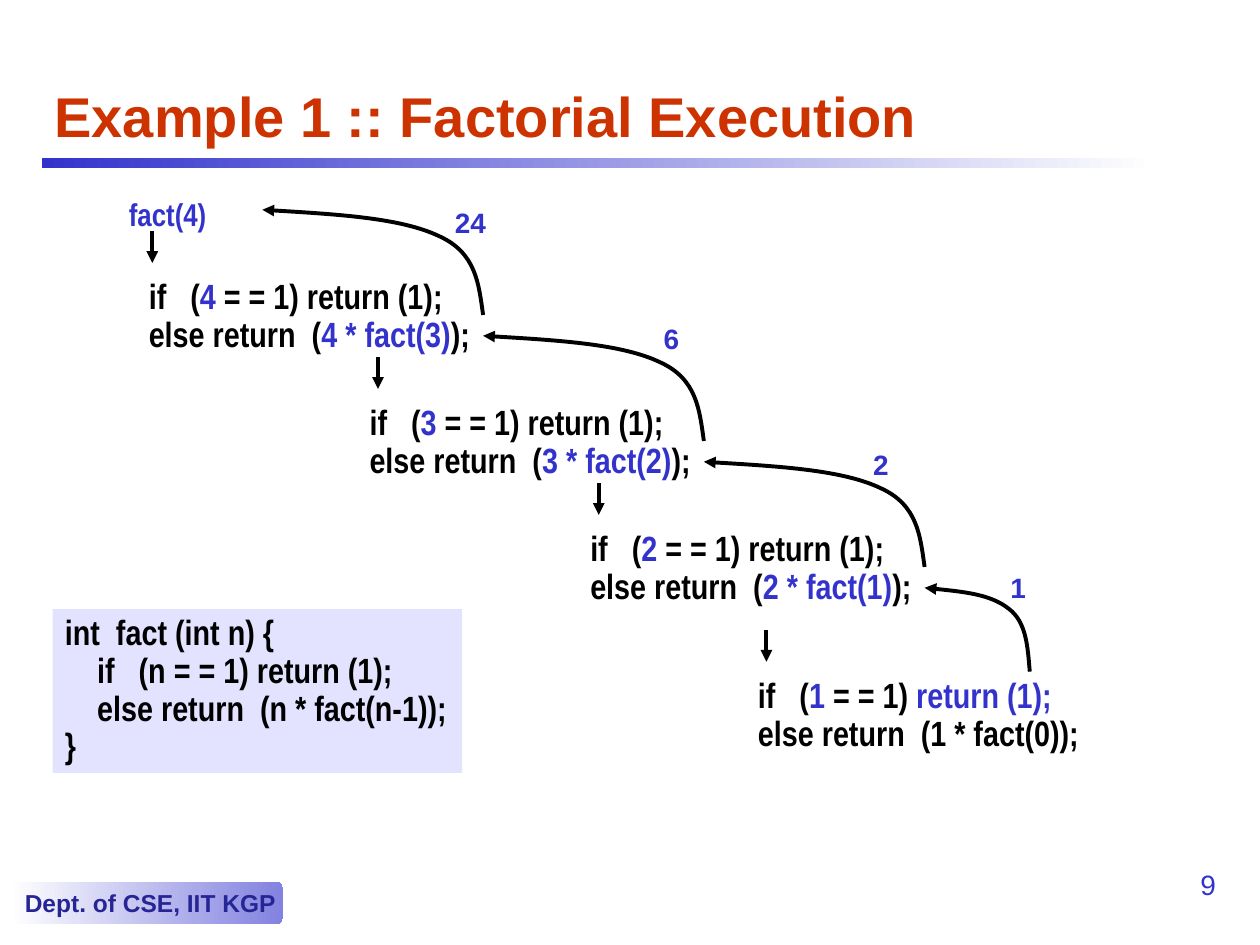
"""Builds a slide that traces the recursive calls of a factorial function."""
from lxml import etree
from pptx import Presentation
from pptx.dml.color import RGBColor
from pptx.enum.shapes import MSO_CONNECTOR, MSO_SHAPE
from pptx.enum.text import MSO_ANCHOR, PP_ALIGN
from pptx.oxml.ns import qn
from pptx.util import Cm, Pt

STRAIGHT = MSO_CONNECTOR.STRAIGHT
RECT, ROUNDED = MSO_SHAPE.RECTANGLE, MSO_SHAPE.ROUNDED_RECTANGLE
TOP, MIDDLE = MSO_ANCHOR.TOP, MSO_ANCHOR.MIDDLE
LEFT, RIGHT = PP_ALIGN.LEFT, PP_ALIGN.RIGHT

COLORS = {"title": "CC3300", "blue": "3333CC", "ink": "000000", "white": "FFFFFF",
          "code": "E3E3FF", "badge": "8282E0", "badge_text": "252595"}
SANS, NARROW = "Arial", "Arial Narrow"

TITLE = "Example 1 :: Factorial Execution"
DEPARTMENT = "Dept. of CSE, IIT KGP"
PAGE = "9"
FIRST_CALL = "fact(4)"
FUNCTION = [(0, "int  fact (int n) {"), (1, "if   (n = = 1) return (1);"),
            (1, "else return  (n * fact(n-1));"), (0, "}")]
RECURSIVE_NS = [4, 3, 2]
BASE_CASE = [[("if   (", "ink"), ("1", "blue"), (" = = 1) ", "ink"), ("return (1);", "blue")],
             [("else return  (1 * fact(0));", "ink")]]

STEP_X, STEP_Y = 4.45, 2.54
CALL_LEFT, CALL_TOP, CALL_SIZE = 2.75, 5.5, (7.62, 1.78)
BASE_CASE_AT = (15.03, 13.55)
DOWN_ARROWS = [(3.07, 4.66), (7.62, 7.2), (12.07, 9.74), (15.45, 12.7)]
DOWN_LENGTH = 0.64
RETURN_LEFT, RETURN_TOP = 5.29, 4.23
RETURN_SIZE, LAST_RETURN_SIZE = (4.45, 2.12), (2.12, 1.69)
RETURNED = [("24", 8.92, 4.01, 1.14), ("6", 13.13, 6.35, 0.81),
            ("2", 17.35, 8.89, 0.81), ("1", 20.12, 11.38, 0.81)]
CURVE = [(1, 1), (0.98, 0.71), (0.97, 0.41), (0.8, 0.25), (0.63, 0.08), (0.32, 0.04), (0, 0)]
CODE_INDENT = 0.65


def rgb(color):
    return RGBColor.from_string(COLORS[color])


def write(shape, lines, size, font, wrap=True, anchor=TOP, align=LEFT,
          bold=True, spacing=None, levels=()):
    frame = shape.text_frame
    frame.word_wrap = wrap
    frame.vertical_anchor = anchor
    for index, runs in enumerate(lines):
        paragraph = frame.paragraphs[0] if index == 0 else frame.add_paragraph()
        paragraph.alignment = align
        if spacing:
            paragraph.line_spacing = spacing
        paragraph.font.size, paragraph.font.name = Pt(size), font
        paragraph.font.bold = bold
        if levels and levels[index]:
            indent = paragraph._p.get_or_add_pPr()
            indent.set("marL", str(Cm(CODE_INDENT * levels[index])))
        for words, color in runs:
            run = paragraph.add_run()
            run.text = words
            run.font.color.rgb = rgb(color)


def add_text(slide, box, lines, size, font, **style):
    write(slide.shapes.add_textbox(*map(Cm, box)), lines, size, font, **style)


def add_panel(slide, preset, box, *fills):
    panel = slide.shapes.add_shape(preset, *map(Cm, box))
    panel.shadow.inherit = False
    panel.line.fill.background()
    if len(fills) == 1:
        panel.fill.solid()
        panel.fill.fore_color.rgb = rgb(fills[0])
    else:
        panel.fill.gradient()
        panel.fill.gradient_angle = 0
        for stop, color in zip(panel.fill.gradient_stops, fills):
            stop.color.rgb = rgb(color)
    return panel


def style_arrow(arrow):
    arrow.line.color.rgb = rgb("ink")
    arrow.line.width = Pt(2.25)
    etree.SubElement(arrow.line._get_or_add_ln(), qn("a:tailEnd"), type="triangle")


def add_down_arrow(slide, x, y):
    arrow = slide.shapes.add_connector(STRAIGHT, Cm(x), Cm(y), Cm(x), Cm(y + DOWN_LENGTH))
    style_arrow(arrow)
    etree.SubElement(arrow._element.spPr, qn("a:effectLst"))


def add_return_arrow(slide, left, top, width, height):
    points = [(Cm(left + width * x), Cm(top + height * y)) for x, y in CURVE]
    builder = slide.shapes.build_freeform(*points[0])
    builder.add_line_segments(points[1:], close=False)
    arrow = builder.convert_to_shape()
    arrow.shadow.inherit = False
    arrow.fill.background()
    style_arrow(arrow)
    segments = list(arrow._element.iter(qn("a:lnTo")))
    for start in range(0, len(segments), 3):
        bezier = etree.SubElement(segments[start].getparent(), qn("a:cubicBezTo"))
        for segment in segments[start:start + 3]:
            bezier.append(segment[0])
            segment.getparent().remove(segment)


def main():
    deck = Presentation()
    deck.slide_width, deck.slide_height = Cm(25.4), Cm(19.05)
    slide = deck.slides.add_slide(deck.slide_layouts[6])

    add_panel(slide, RECT, (0.85, 3.18, 22.44, 0.21), "blue", "white")
    badge = add_panel(slide, ROUNDED, (0.21, 17.78, 5.5, 0.85), "white", "badge")
    write(badge, [[(DEPARTMENT, "badge_text")]], 14, SANS, wrap=False, anchor=MIDDLE)
    add_text(slide, (23.28, 17.36, 1.48, 1.27), [[(PAGE, "blue")]], 16, SANS,
             align=RIGHT, bold=False)
    add_text(slide, (0.85, 1.48, 23.92, 1.69), [[(TITLE, "title")]], 32, SANS, anchor=MIDDLE)

    add_text(slide, (2.35, 3.81, 2.1, 1.02), [[(FIRST_CALL, "blue")]], 18, NARROW, wrap=False)
    for i, n in enumerate(RECURSIVE_NS):
        call = [[("if   (", "ink"), (str(n), "blue"), (" = = 1) return (1);", "ink")],
                [("else return  (", "ink"), (f"{n} * fact({n - 1})", "blue"), (");", "ink")]]
        add_text(slide, (CALL_LEFT + i * STEP_X, CALL_TOP + i * STEP_Y, *CALL_SIZE),
                 call, 20, NARROW, spacing=0.9)
    add_text(slide, (*BASE_CASE_AT, *CALL_SIZE), BASE_CASE, 20, NARROW, spacing=0.9)

    for x, y in DOWN_ARROWS:
        add_down_arrow(slide, x, y)
    for i, (value, left, top, width) in enumerate(RETURNED):
        size = RETURN_SIZE if i < len(RECURSIVE_NS) else LAST_RETURN_SIZE
        add_return_arrow(slide, RETURN_LEFT + i * STEP_X, RETURN_TOP + i * STEP_Y, *size)
        add_text(slide, (left, top, width, 0.94), [[(value, "blue")]], 16, SANS, wrap=False)

    levels, code = zip(*FUNCTION)
    listing = add_panel(slide, RECT, (1.06, 12.28, 8.26, 3.3), "code")
    write(listing, [[(line, "ink")] for line in code], 20, NARROW, spacing=0.9, levels=levels)

    deck.save("out.pptx")


if __name__ == "__main__":
    main()
